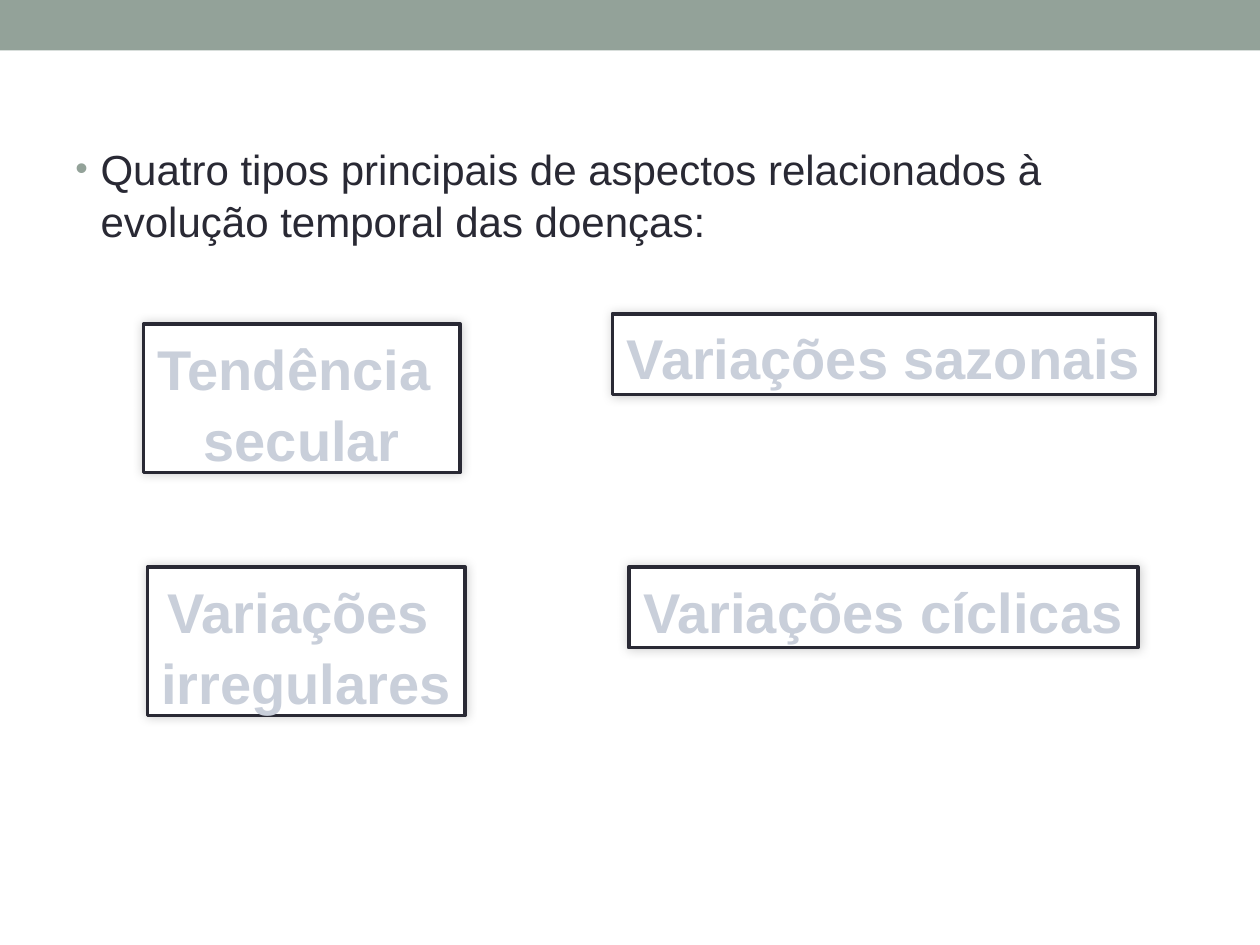
from dataclasses import dataclass

from lxml import etree
from pptx import Presentation, util as u
from pptx.dml.color import RGBColor
from pptx.enum import shapes, text
from pptx.oxml import ns

WIDTH, HEIGHT = u.Inches(10), u.Inches(7.5)


@dataclass(frozen=True)
class Theme:
    font: str = "Arial"
    accent: str = "93A299"
    ink: str = "292934"
    paper: str = "FFFFFF"
    label: str = "C9CFDA"
    body_size: int = 24
    label_size: int = 32
    border: float = 2.08


@dataclass(frozen=True)
class Card:
    """A framed label; position and size are percentages of the slide."""
    lines: tuple[str, ...]
    left: float
    top: float
    width: float
    height: float
    shadow_angle: int


THEME = Theme()
ONE_LINE, TWO_LINES = 8.53, 15.73
CARDS = (
    Card(("Tendência ", "secular"), 11.4, 34.27, 25.1, TWO_LINES, 225),
    Card(("Variações cíclicas",), 49.9, 60, 40.4, ONE_LINE, 315),
    Card(("Variações sazonais",), 48.6, 33.2, 43.1, ONE_LINE, 315),
    Card(("Variações ", "irregulares"), 11.7, 60, 25.2, TWO_LINES, 225),
)


def share(left: float, top: float, width: float, height: float) -> tuple[int, ...]:
    """Turn percentages of the slide into lengths."""
    return tuple(int(part * side / 100) for part, side in
                 zip((left, top, width, height), (WIDTH, HEIGHT) * 2))


def add_node(parent, tag: str, **attributes):
    return etree.SubElement(parent, ns.qn(tag),
                            {name: str(value) for name, value in attributes.items()})


def style_paragraph(p, size: int, color: str, spacing: float, bold: bool = False) -> None:
    p.line_spacing = spacing
    for r in p.runs:
        r.font.name = THEME.font
        r.font.size = u.Pt(size)
        r.font.bold = bold
        r.font.color.rgb = RGBColor.from_string(color)


def add_rectangle(s, box: tuple[int, ...], fill: str):
    sp = s.shapes.add_shape(shapes.MSO_SHAPE.RECTANGLE, *box)
    sp.shadow.inherit = False
    sp.fill.solid()
    sp.fill.fore_color.rgb = RGBColor.from_string(fill)
    sp.line.fill.background()
    return sp


def add_glow_shadow(sp, angle: int) -> None:
    effects = sp._element.spPr.find(ns.qn("a:effectLst"))
    shadow = add_node(effects, "a:outerShdw", blurRad=u.Pt(6), dist=0,
                      dir=angle * 60000, algn="ctr", rotWithShape=0)
    color = add_node(shadow, "a:srgbClr", val="000000")
    add_node(color, "a:alpha", val=20000)


def add_bullet(p, indent: int) -> None:
    pPr = p._p.get_or_add_pPr()
    pPr.set("marL", str(indent))
    pPr.set("indent", str(-indent))
    color = add_node(pPr, "a:buClr")
    add_node(color, "a:srgbClr", val=THEME.accent)
    add_node(pPr, "a:buSzPct", val=85000)
    add_node(pPr, "a:buFont", typeface=THEME.font)
    add_node(pPr, "a:buChar", char="•")


def add_body(s, wording: str) -> None:
    tf = s.shapes.add_textbox(*share(5, 14.27, 90, 71.07)).text_frame
    tf.word_wrap = True
    tf.text = wording
    p = tf.paragraphs[0]
    add_bullet(p, u.Inches(0.2))
    style_paragraph(p, THEME.body_size, THEME.ink, 1.04)


def add_card(s, card: Card) -> None:
    box = share(card.left, card.top, card.width, card.height)
    sp = add_rectangle(s, box, THEME.paper)
    sp.line.color.rgb = RGBColor.from_string(THEME.ink)
    sp.line.width = u.Pt(THEME.border)
    add_glow_shadow(sp, card.shadow_angle)
    tf = sp.text_frame
    tf.text = "\n".join(card.lines)
    tf.word_wrap = False
    tf.auto_size = text.MSO_AUTO_SIZE.SHAPE_TO_FIT_TEXT
    tf.vertical_anchor = text.MSO_ANCHOR.TOP
    for p in tf.paragraphs:
        p.alignment = text.PP_ALIGN.CENTER
        style_paragraph(p, THEME.label_size, THEME.label, 1.06, bold=True)


def main() -> None:
    prs = Presentation()
    prs.slide_width, prs.slide_height = WIDTH, HEIGHT
    s = prs.slides.add_slide(prs.slide_layouts[6])

    # Top band
    add_rectangle(s, share(0, 0, 100, 5.33), THEME.accent)

    # Introductory sentence
    add_body(s, "Quatro tipos principais de aspectos relacionados à "
                "evolução temporal das doenças:")

    # The four kinds of change over time
    for card in CARDS:
        add_card(s, card)

    prs.save("out.pptx")


if __name__ == "__main__":
    main()
